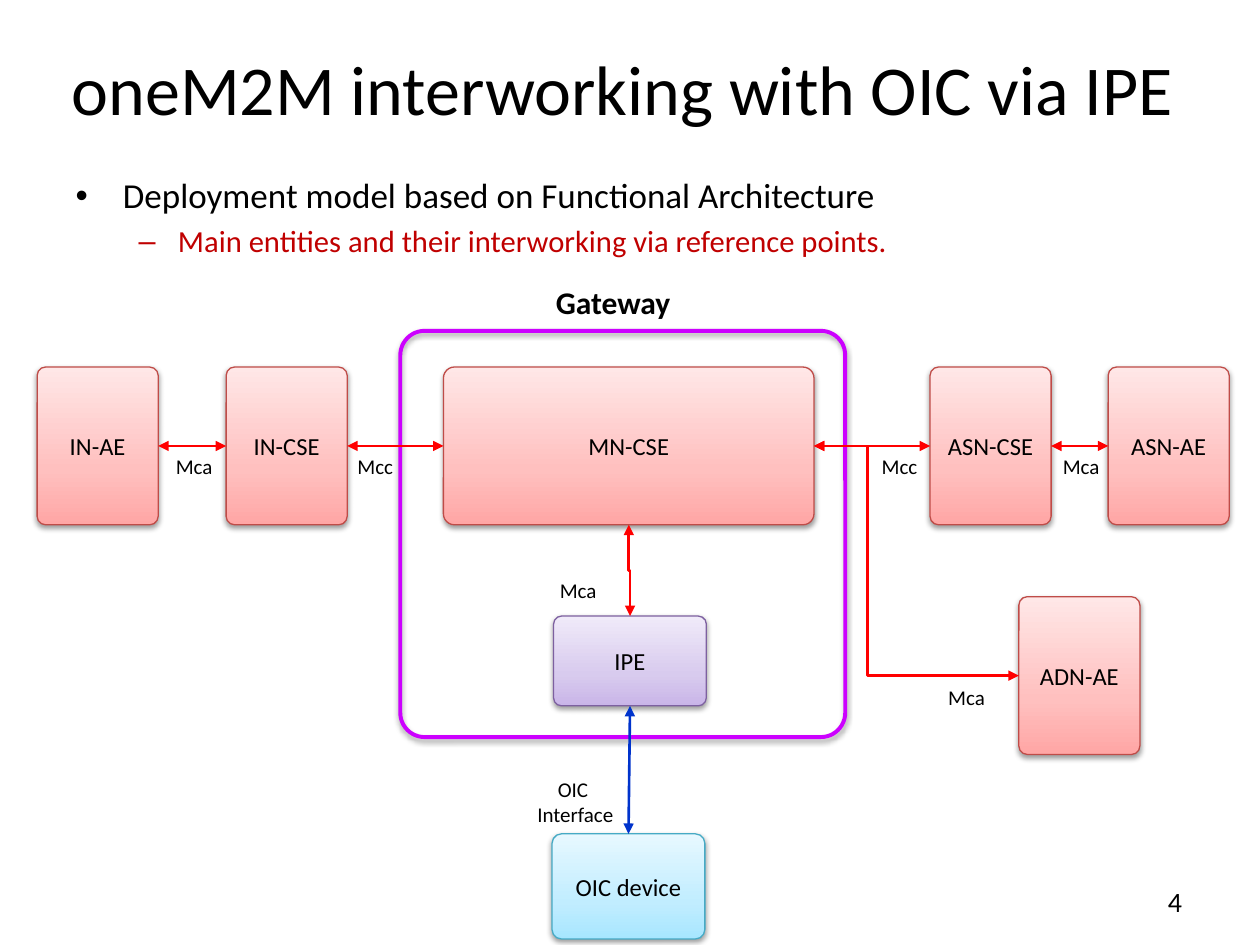
"""Build the slide on oneM2M interworking with OIC via an IPE."""
from copy import deepcopy

from lxml import etree
from pptx import Presentation
from pptx.dml.color import RGBColor
from pptx.enum.shapes import MSO_CONNECTOR, MSO_SHAPE
from pptx.enum.text import MSO_ANCHOR, MSO_AUTO_SIZE, PP_ALIGN
from pptx.oxml.ns import qn
from pptx.util import Cm, Pt

ROUNDED = MSO_SHAPE.ROUNDED_RECTANGLE
STRAIGHT, ELBOW = MSO_CONNECTOR.STRAIGHT, MSO_CONNECTOR.ELBOW
CENTER, RIGHT = PP_ALIGN.CENTER, PP_ALIGN.RIGHT
MIDDLE, TOP = MSO_ANCHOR.MIDDLE, MSO_ANCHOR.TOP
NO_FIT, GROW = MSO_AUTO_SIZE.NONE, MSO_AUTO_SIZE.SHAPE_TO_FIT_TEXT
SITE_TOP, SITE_LEFT, SITE_BOTTOM, SITE_RIGHT = range(4)

COLORS = {
    "text": "000000", "accent": "C00000", "shadow": "000000",
    "gateway": "CC00FF", "reference": "FF0000", "oic": "0033CC",
    "red_line": "BF4C48", "red_0": "FFA6A5", "red_35": "FFC0BF", "red_100": "FFE7E7",
    "violet_line": "7D60A0", "violet_0": "C9B5E8", "violet_35": "D8CBEE", "violet_100": "F0EAF9",
    "cyan_line": "46AAC5", "cyan_0": "A7E6FF", "cyan_35": "C1EDFF", "cyan_100": "E7F8FF",
}
STOPS = (0, 35, 100)

NODE_WIDTH, NODE_HEIGHT, ROW_TOP, LABEL_TOP = 2.44, 3.18, 7.4, 9.02
NODES = {
    "MN-CSE": (8.94, ROW_TOP, 7.47, NODE_HEIGHT, "red", 0.07),
    "OIC device": (11.13, 16.81, 3.08, 2.12, "cyan", 0.09),
    "IPE": (11.16, 12.42, 3.08, 1.81, "violet", 0.09),
    "IN-CSE": (4.56, ROW_TOP, NODE_WIDTH, NODE_HEIGHT, "red", 0.07),
    "IN-AE": (0.75, ROW_TOP, NODE_WIDTH, NODE_HEIGHT, "red", 0.07),
    "ASN-AE": (22.34, ROW_TOP, NODE_WIDTH, NODE_HEIGHT, "red", 0.07),
    "ASN-CSE": (18.75, ROW_TOP, NODE_WIDTH, NODE_HEIGHT, "red", 0.07),
    "ADN-AE": (20.54, 12.03, NODE_WIDTH, NODE_HEIGHT, "red", 0.07),
}
ROW_LINKS = [("IN-AE", "IN-CSE"), ("IN-CSE", "MN-CSE"),
             ("MN-CSE", "ASN-CSE"), ("ASN-CSE", "ASN-AE")]
REFERENCE_POINTS = [
    ("Mca", 11.02, 11.51), ("Mcc", 6.93, LABEL_TOP), ("Mca", 3.28, LABEL_TOP),
    ("Mcc", 17.5, LABEL_TOP), ("Mca", 21.16, LABEL_TOP), ("Mca", 18.85, 13.67),
]


def rgb(name):
    """Return the named colour."""
    return RGBColor.from_string(COLORS[name])


def apply(target, formats):
    """Set every attribute listed in formats on the target."""
    for attribute, value in formats.items():
        setattr(target, attribute, value)


def place(shape, left, top, width, height):
    """Move and size a shape, in centimetres."""
    apply(shape, {"left": Cm(left), "top": Cm(top), "width": Cm(width), "height": Cm(height)})


def style_paragraph(paragraph, size, color="text", bold=False, **formats):
    """Format a paragraph and its font."""
    apply(paragraph, formats)
    apply(paragraph.font, {"name": "Calibri", "size": Pt(size), "bold": bold})
    paragraph.font.color.rgb = rgb(color)


def add_outline(slide, box, color, width, corner):
    """Add a rounded box with a line and a soft shadow below it."""
    shape = slide.shapes.add_shape(ROUNDED, *map(Cm, box))
    shape.adjustments[0] = corner
    shape.line.color.rgb = rgb(color)
    shape.line.width = Pt(width)
    shape.shadow.inherit = False
    effects = shape._element.spPr.find(qn("a:effectLst"))
    shadow = etree.SubElement(effects, qn("a:outerShdw"), blurRad="40000", dist="20000",
                              dir="5400000", rotWithShape="0")
    tint = etree.SubElement(shadow, qn("a:srgbClr"), val=COLORS["shadow"])
    etree.SubElement(tint, qn("a:alpha"), val="38000")
    return shape


def add_node(slide, name, left, top, width, height, hue, corner):
    """Add an entity with an upward gradient and its name."""
    node = add_outline(slide, (left, top, width, height), f"{hue}_line", 0.75, corner)
    node.fill.gradient()
    node.fill.gradient_angle = 90
    stop_list = node._element.spPr.find(".//" + qn("a:gsLst"))
    stop_list.append(deepcopy(stop_list[-1]))
    for stop, percent in zip(node.fill.gradient_stops, STOPS):
        stop.color.rgb = rgb(f"{hue}_{percent}")
        stop.position = percent / 100
    apply(node.text_frame, {"text": name, "vertical_anchor": MIDDLE, "word_wrap": True})
    style_paragraph(node.text_frame.paragraphs[0], 14, alignment=CENTER)
    return node


def add_label(slide, text, box, size, bold=False, align=CENTER, **frame_formats):
    """Add a text box whose paragraphs share one format."""
    frame = slide.shapes.add_textbox(*map(Cm, box)).text_frame
    apply(frame, {"text": text, "word_wrap": False, "auto_size": GROW, **frame_formats})
    for paragraph in frame.paragraphs:
        style_paragraph(paragraph, size, bold=bold, alignment=align)


def add_arrow(slide, kind, color, ends=(0, 0, 0, 0)):
    """Add a connector with arrowheads at both ends."""
    arrow = slide.shapes.add_connector(kind, *ends)
    arrow.line.color.rgb = rgb(color)
    arrow.line.width = Pt(1.5)
    properties = arrow._element.spPr
    for end in ("a:headEnd", "a:tailEnd"):
        etree.SubElement(properties.find(qn("a:ln")), qn(end), type="triangle")
    etree.SubElement(properties, qn("a:effectLst"))
    return arrow


def link(slide, start, start_site, end, end_site, color="reference", kind=STRAIGHT):
    """Join two entities with an arrow."""
    arrow = add_arrow(slide, kind, color)
    arrow.begin_connect(start, start_site)
    arrow.end_connect(end, end_site)
    return arrow


def set_bend(arrow, share):
    """Put the bend of an elbow arrow at a share of its width."""
    guides = arrow._element.spPr.find(".//" + qn("a:avLst"))
    etree.SubElement(guides, qn("a:gd"), name="adj1", fmla=f"val {round(share * 100000)}")


def link_down(slide, upper, lower):
    """Join two stacked entities with an elbow arrow turned upright."""
    start_x, end_x = (node.left + node.width // 2 for node in (upper, lower))
    start_y, end_y = upper.top + upper.height, lower.top
    middle_x, middle_y = (start_x + end_x) // 2, (start_y + end_y) // 2
    half_run, half_shift = (end_y - start_y) // 2, (end_x - start_x) // 2
    arrow = add_arrow(slide, ELBOW, "reference", (middle_x + half_run, middle_y - half_shift,
                                                  middle_x - half_run, middle_y + half_shift))
    arrow._element.spPr.find(qn("a:xfrm")).set("rot", "16200000")


def fill_placeholders(slide):
    """Write the title and the two-level list."""
    title, body = slide.shapes.title, slide.placeholders[1]
    place(title, 0.64, 0.84, 24.13, 2.11)
    apply(title.text_frame, {"text": "oneM2M interworking with OIC via IPE ",
                             "vertical_anchor": MIDDLE, "auto_size": NO_FIT})
    style_paragraph(title.text_frame.paragraphs[0], 40, alignment=CENTER, line_spacing=0.85)
    place(body, 1.27, 3.38, 22.86, 1.75)
    apply(body.text_frame, {
        "text": "Deployment model based on Functional Architecture\n"
                "Main entities and their interworking via reference points.",
        "vertical_anchor": TOP, "auto_size": NO_FIT})
    model, entities = body.text_frame.paragraphs
    style_paragraph(model, 20)
    style_paragraph(entities, 17.5, "accent", level=1)


def main():
    """Build and save the presentation."""
    deck = Presentation()
    apply(deck, {"slide_width": Cm(25.4), "slide_height": Cm(19.05)})
    slide = deck.slides.add_slide(deck.slide_layouts[1])
    fill_placeholders(slide)

    nodes = {name: add_node(slide, name, *layout) for name, layout in NODES.items()}
    gateway = add_outline(slide, (8.07, 6.67, 8.97, 8.19), "gateway", 2.25, 0.06)
    gateway.fill.background()
    add_label(slide, "Gateway", (10.8, 5.31, 3.12, 1.55), 18, bold=True,
              word_wrap=True, auto_size=NO_FIT, vertical_anchor=MIDDLE)

    for left, right in ROW_LINKS:
        link(slide, nodes[left], SITE_RIGHT, nodes[right], SITE_LEFT)
    link_down(slide, nodes["MN-CSE"], nodes["IPE"])
    link(slide, nodes["IPE"], SITE_BOTTOM, nodes["OIC device"], SITE_TOP, "oic")
    branch = link(slide, nodes["MN-CSE"], SITE_RIGHT, nodes["ADN-AE"], SITE_LEFT, kind=ELBOW)
    set_bend(branch, 0.26)

    for name, left, top in REFERENCE_POINTS:
        add_label(slide, name, (left, top, 1.27, 0.76), 12)
    add_label(slide, "OIC \nInterface", (10.57, 15.52, 2.06, 1.27), 12)
    add_label(slide, "4", (22.91, 17.7, 1.17, 0.94), 16, align=RIGHT)
    deck.save("out.pptx")


if __name__ == "__main__":
    main()
